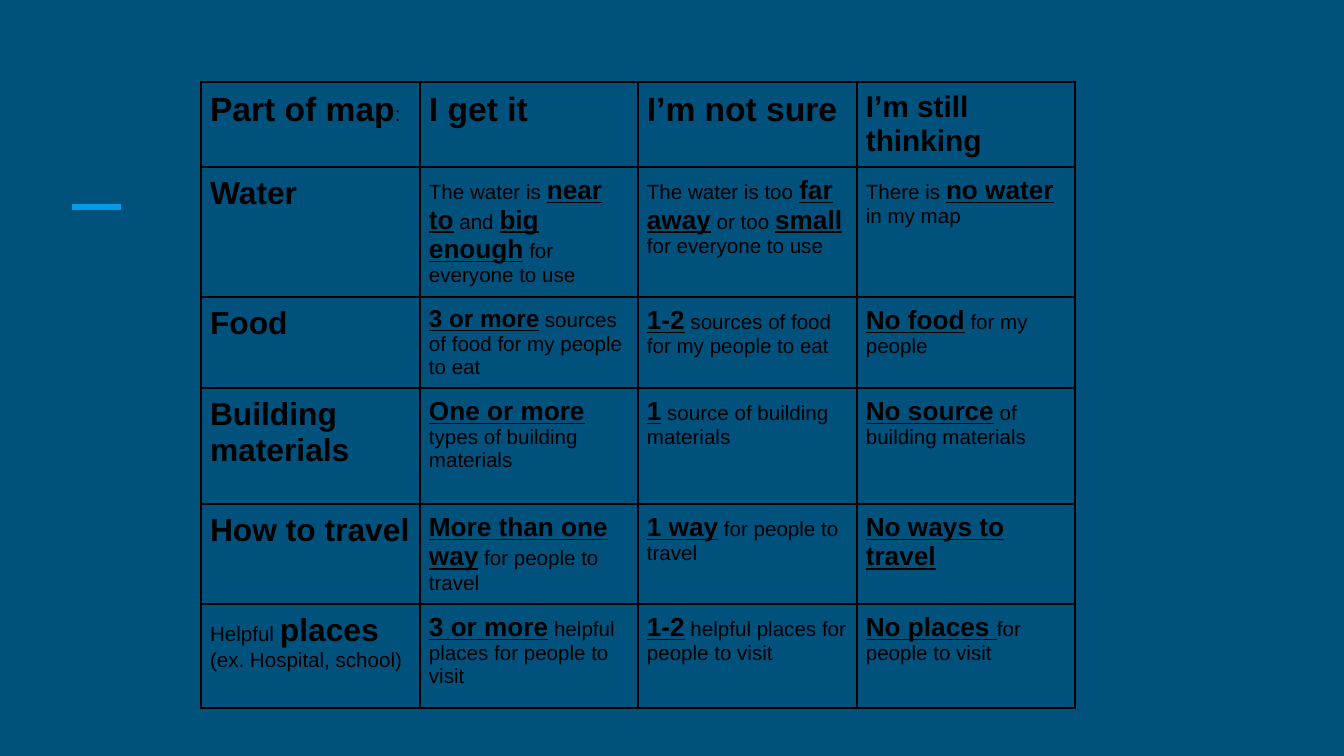
from lxml import etree
from pptx import Presentation, util as u
from pptx.dml.color import RGBColor
from pptx.enum import shapes
from pptx.oxml import parse_xml
from pptx.oxml.ns import nsdecls, qn

PX = 914400 / 134.4
BLACK = "000000"


def px(length):
    return u.Emu(round(length * PX))


def write(cell, content, strong_size=14, underline=True, size=11, color=BLACK, font="Arial"):
    """Write content into a cell; the parts between asterisks are strong."""
    paragraph = cell.text_frame.paragraphs[0]
    for index, part in enumerate(content.split("*")):
        if not part:
            continue
        strong = index % 2 == 1
        run = paragraph.add_run()
        run.text = part
        run.font.name = font
        run.font.size = u.Pt(strong_size if strong else size)
        run.font.bold = strong
        run.font.underline = strong and underline
        run.font.color.rgb = RGBColor.from_string(color)


presentation = Presentation()
presentation.slide_width = px(1344)
presentation.slide_height = px(756)
slide = presentation.slides.add_slide(presentation.slide_layouts[6])
slide.background.fill.solid()
slide.background.fill.fore_color.rgb = RGBColor.from_string("00517C")

accent = slide.shapes.add_connector(
    shapes.MSO_CONNECTOR.STRAIGHT, px(72), px(207), px(121), px(207))
accent.line.color.rgb = RGBColor.from_string("039BE5")
accent.line.width = u.Pt(3)
etree.SubElement(accent._element.spPr, qn("a:effectLst"))

column_widths = [219, 218, 219, 218]
row_heights = [85, 130, 91, 116, 100, 104]
rows = [
    ["*Part of map*:", "*I get it*", "*I’m not sure*", "*I’m still thinking* "],
    ["*Water*",
     "The water is *near to* and *big enough* for everyone to use",
     "The water is too *far* *away* or too *small* for everyone to use",
     "There is *no water* in my map"],
    ["*Food*",
     "*3 or more* sources of food for my people to eat",
     "*1-2* sources of food for my people to eat",
     "*No food* for my people"],
    ["*Building materials*",
     "*One or more* types of building materials",
     "*1* source of building materials",
     "*No source* of building materials"],
    ["*How to travel*",
     "*More than one way* for people to travel",
     "*1 way* for people to travel",
     "*No ways to travel*"],
    ["Helpful *places* (ex. Hospital, school)",
     "*3 or more* helpful places for people to visit",
     "*1-2* helpful places for people to visit",
     "*No places *for people to visit"],
]
# Strong text that departs from 14 pt, by row and column
strong_sizes = {(0, 0): 18, (0, 1): 18, (0, 2): 18, (0, 3): 16, (2, 1): 13}

table = slide.shapes.add_table(
    len(row_heights), len(column_widths), px(201), px(82),
    px(sum(column_widths)), px(sum(row_heights))).table
table.first_row = False
table.horz_banding = False
for column, width in zip(table.columns, column_widths):
    column.width = px(width)
for row, height in zip(table.rows, row_heights):
    row.height = px(height)

for r, contents in enumerate(rows):
    for c, content in enumerate(contents):
        cell = table.cell(r, c)
        cell.margin_left = cell.margin_right = px(9)
        cell.margin_top = cell.margin_bottom = px(9)
        properties = cell._tc.get_or_add_tcPr()
        for side in "LRTB":
            properties.append(parse_xml(
                f'<a:ln{side} {nsdecls("a")} w="{u.Pt(1)}"><a:solidFill>'
                f'<a:srgbClr val="{BLACK}"/></a:solidFill></a:ln{side}>'))
        cell.fill.background()
        is_label = r == 0 or c == 0
        write(cell, content, underline=not is_label,
              strong_size=strong_sizes.get((r, c), 17 if is_label else 14))

presentation.save("out.pptx")
